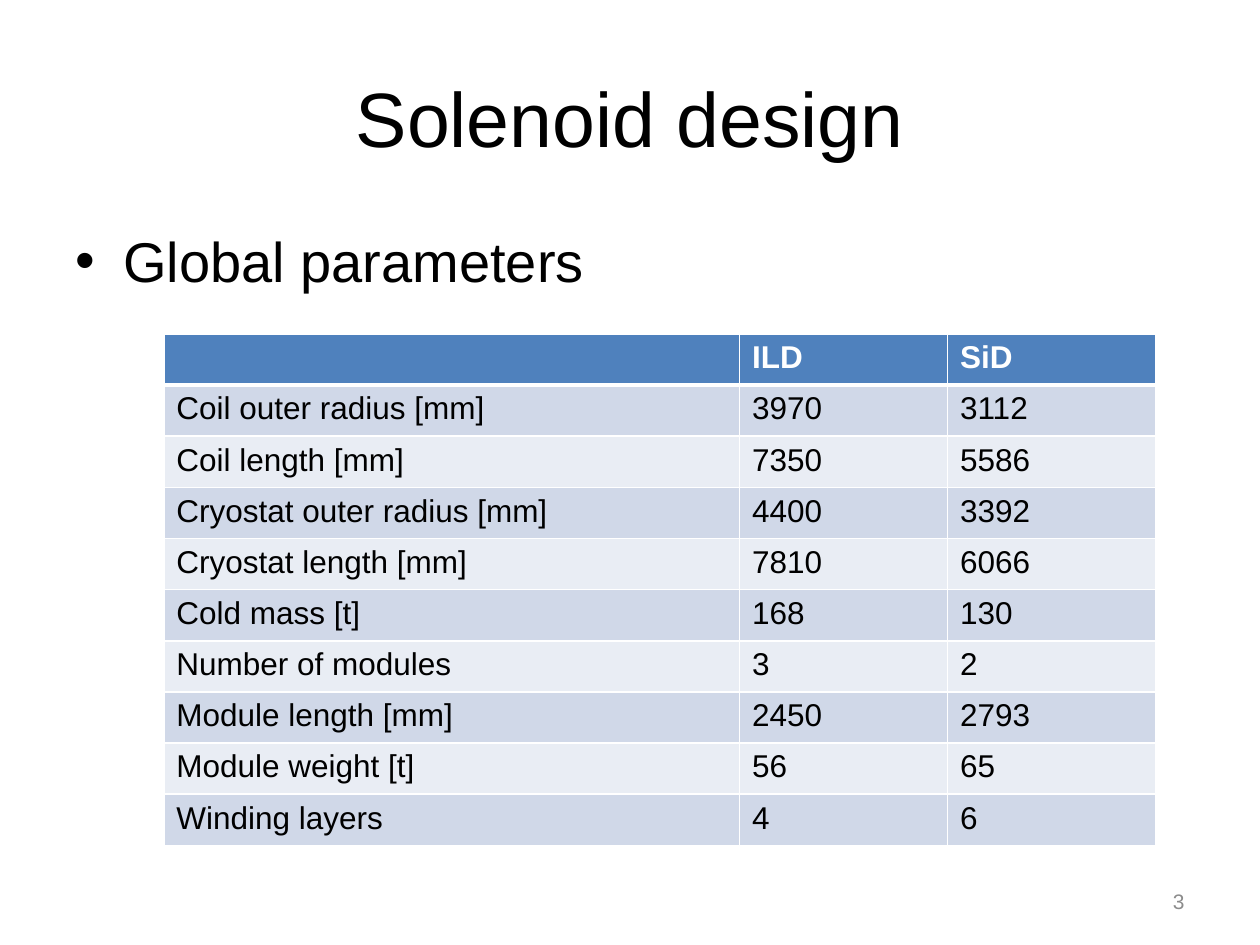
from dataclasses import dataclass

from lxml import etree
from pptx import Presentation
from pptx import util as u
from pptx.dml.color import RGBColor
from pptx.enum import text
from pptx.oxml.ns import qn


@dataclass(frozen=True)
class Theme:
    font: str = "Arial"
    ink: str = "000000"
    white: str = "FFFFFF"
    muted: str = "8C8C8C"
    header: str = "4F81BD"
    bands: tuple = ("D0D8E8", "E9EDF4")
    title_size: int = 44
    body_size: int = 32
    table_size: int = 18
    number_size: int = 12
    rule: int = 1
    header_rule: int = 3


class SlideBuilder:
    def __init__(self, slide, theme):
        self.slide = slide
        self.theme = theme

    def run(self, paragraph, words, size, color, bold=False):
        run = paragraph.add_run()
        run.text = words
        run.font.name = self.theme.font
        run.font.size = u.Pt(size)
        run.font.bold = bold
        run.font.color.rgb = RGBColor.from_string(color)

    def text_box(self, box, words, size, color, align=text.PP_ALIGN.LEFT,
                 anchor=text.MSO_ANCHOR.MIDDLE):
        frame = self.slide.shapes.add_textbox(*map(u.Inches, box)).text_frame
        frame.word_wrap = True
        frame.vertical_anchor = anchor
        paragraph = frame.paragraphs[0]
        paragraph.alignment = align
        self.run(paragraph, words, size, color)
        return paragraph

    def bullet(self, box, words):
        paragraph = self.text_box(box, words, self.theme.body_size, self.theme.ink,
                                  anchor=text.MSO_ANCHOR.TOP)
        properties = paragraph._p.get_or_add_pPr()
        indent = u.Inches(0.38)
        properties.set("marL", str(indent))
        properties.set("indent", str(-indent))
        etree.SubElement(properties, qn("a:buFont"), typeface=self.theme.font)
        etree.SubElement(properties, qn("a:buChar"), char="•")

    def border(self, cell, side, points):
        line = etree.SubElement(cell._tc.get_or_add_tcPr(), qn(f"a:ln{side}"),
                                w=str(u.Pt(points)))
        fill = etree.SubElement(line, qn("a:solidFill"))
        etree.SubElement(fill, qn("a:srgbClr"), val=self.theme.white)

    def table(self, left, top, widths, row_height, rows):
        theme = self.theme
        table = self.slide.shapes.add_table(
            len(rows), len(widths), u.Inches(left), u.Inches(top),
            u.Inches(sum(widths)), u.Inches(row_height * len(rows))).table
        for column, width in zip(table.columns, widths):
            column.width = u.Inches(width)
        for r, values in enumerate(rows):
            table.rows[r].height = u.Inches(row_height)
            is_header = r == 0
            fill = theme.header if is_header else theme.bands[(r - 1) % 2]
            # The heavy rule lies between the header and the first row
            rules = {"L": theme.rule, "R": theme.rule,
                     "T": theme.header_rule if r == 1 else theme.rule,
                     "B": theme.header_rule if is_header else theme.rule}
            for c, value in enumerate(values):
                cell = table.cell(r, c)
                for side, points in rules.items():
                    self.border(cell, side, points)
                cell.fill.solid()
                cell.fill.fore_color.rgb = RGBColor.from_string(fill)
                if value:
                    self.run(cell.text_frame.paragraphs[0], value, theme.table_size,
                             theme.white if is_header else theme.ink, is_header)


PARAMETERS = [
    ("", "ILD", "SiD"),
    ("Coil outer radius [mm]", "3970", "3112"),
    ("Coil length [mm]", "7350", "5586"),
    ("Cryostat outer radius [mm]", "4400", "3392"),
    ("Cryostat length [mm]", "7810", "6066"),
    ("Cold mass [t]", "168", "130"),
    ("Number of modules", "3", "2"),
    ("Module length [mm]", "2450", "2793"),
    ("Module weight [t]", "56", "65"),
    ("Winding layers", "4", "6"),
]


def main():
    deck = Presentation()
    deck.slide_width, deck.slide_height = u.Inches(10), u.Inches(7.5)
    theme = Theme()
    builder = SlideBuilder(deck.slides.add_slide(deck.slide_layouts[6]), theme)

    # Title and lead bullet
    builder.text_box((0.5, 0.3, 9, 1.25), "Solenoid design", theme.title_size,
                     theme.ink, text.PP_ALIGN.CENTER)
    builder.bullet((0.5, 1.75, 9, 4.95), "Global parameters")

    # Solenoid parameters
    builder.table(1.3, 2.65, (4.57, 1.65, 1.65), 0.406, PARAMETERS)

    # Slide number
    builder.text_box((7.17, 6.95, 2.33, 0.4), "3", theme.number_size,
                     theme.muted, text.PP_ALIGN.RIGHT)

    deck.save("out.pptx")


if __name__ == "__main__":
    main()
